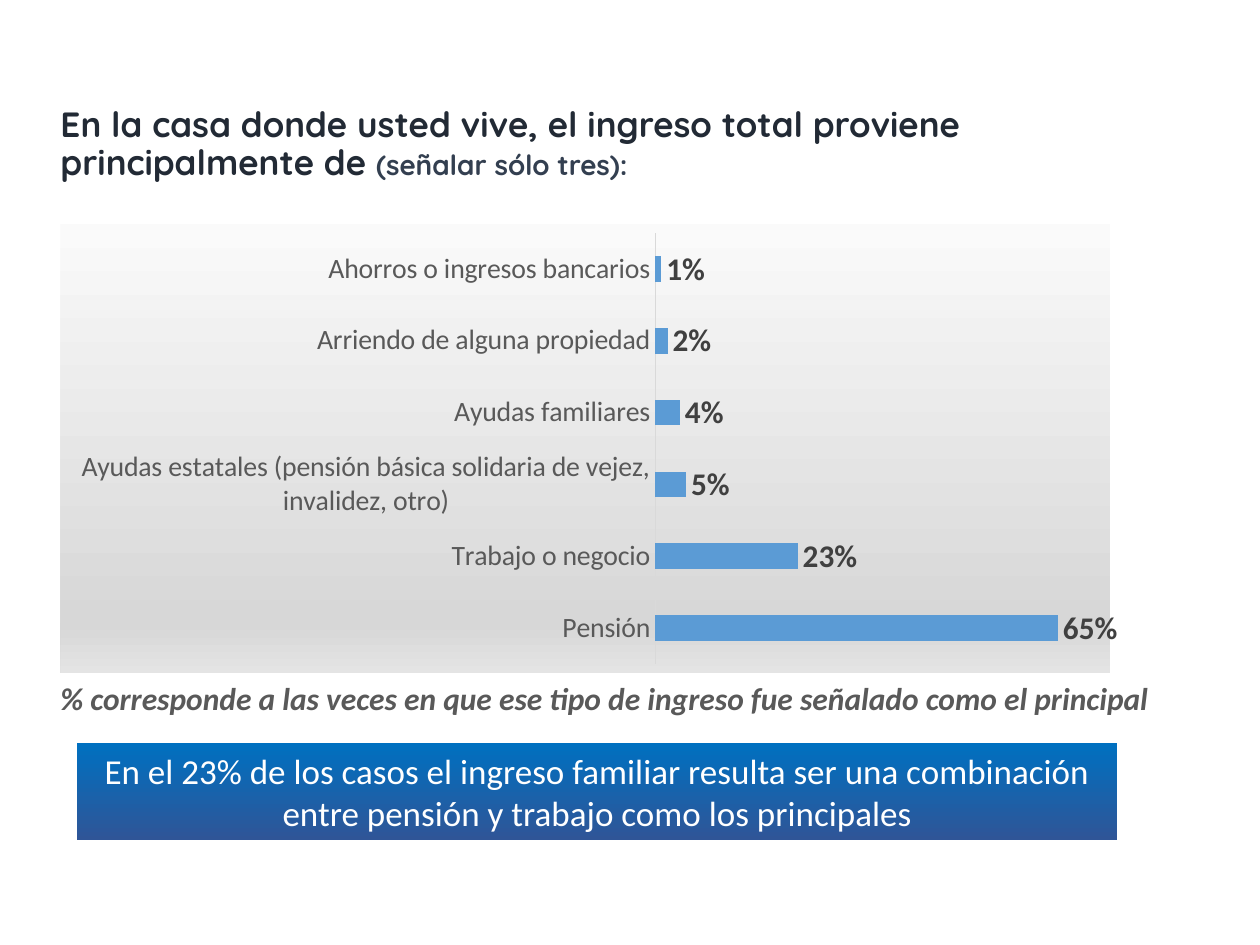
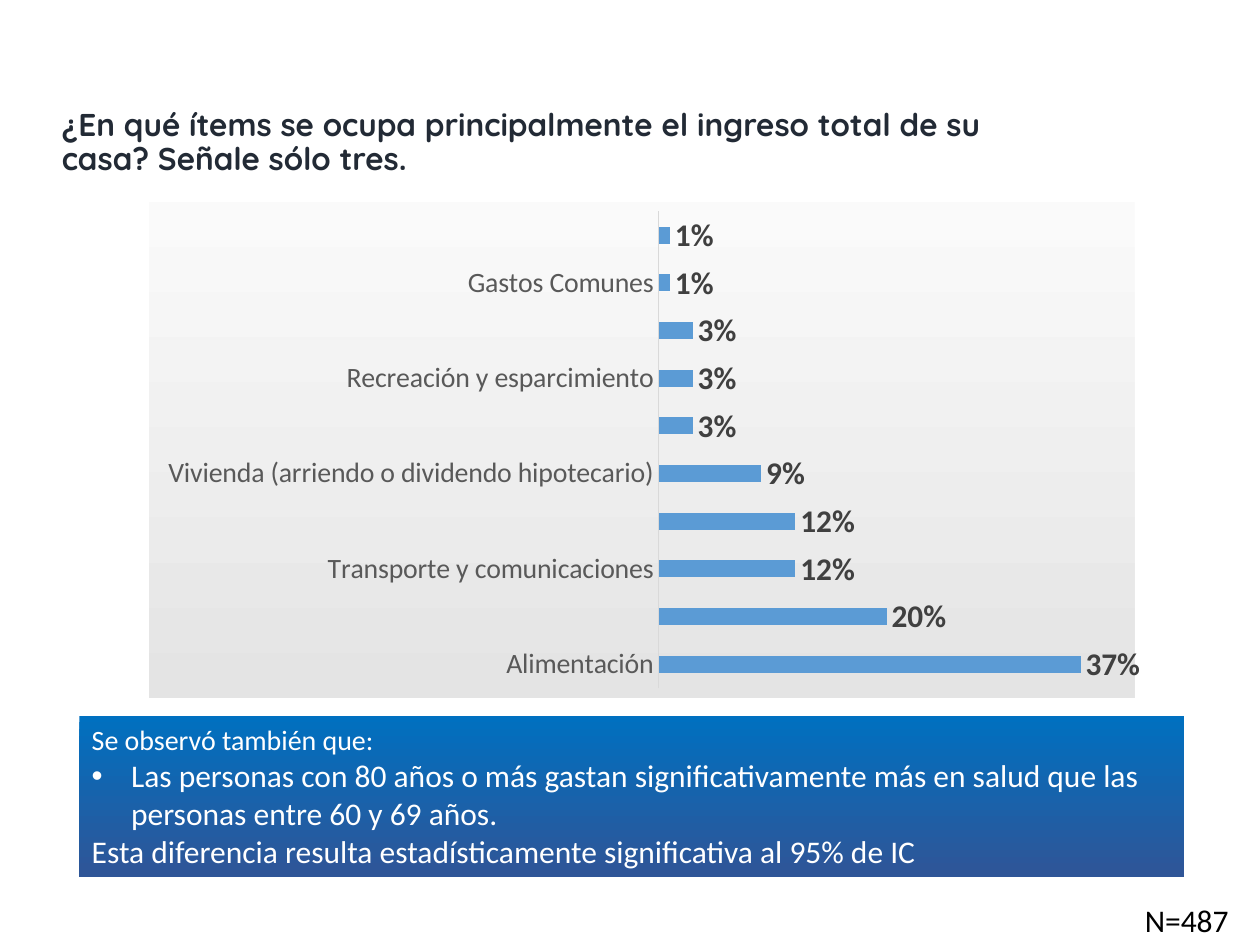
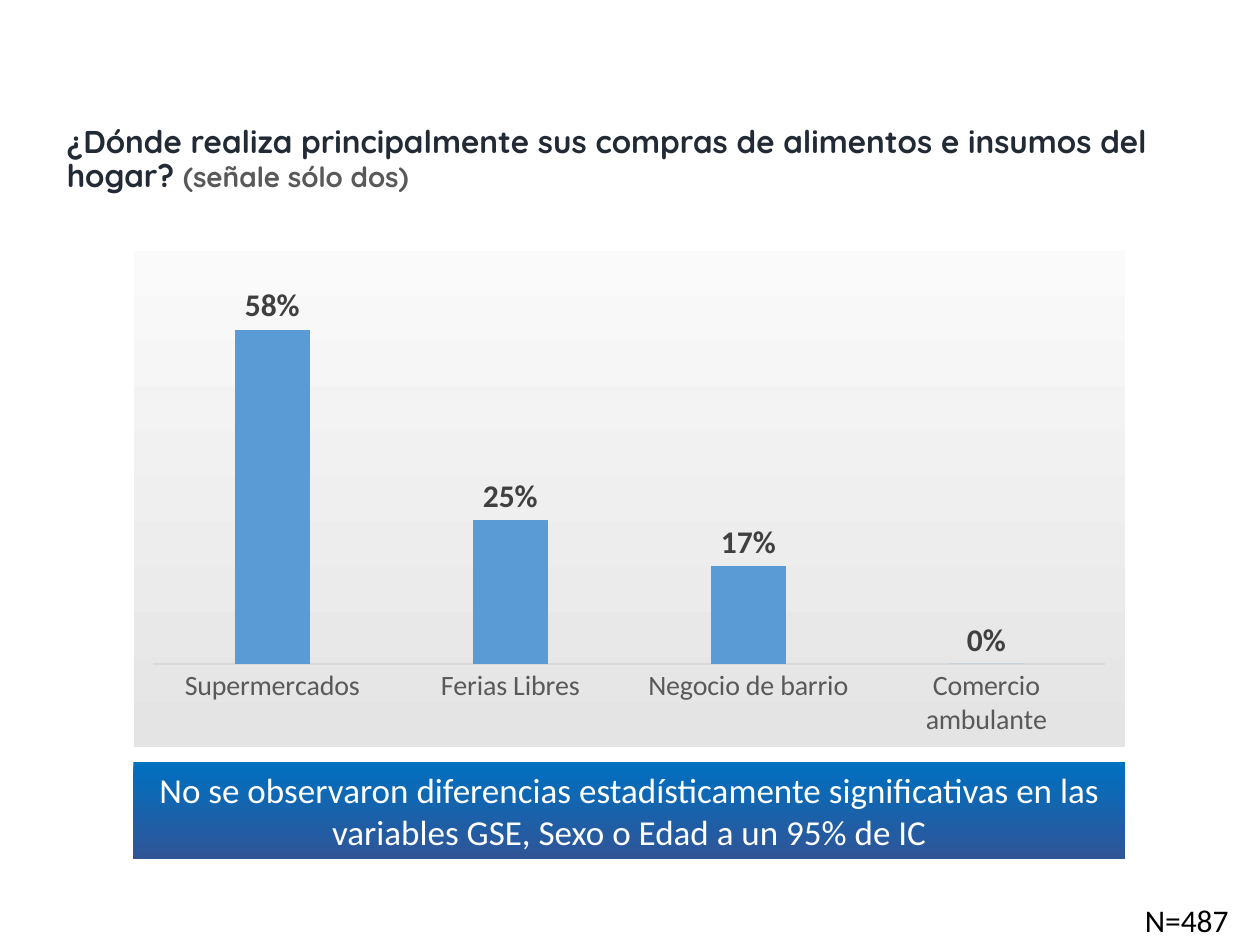
import pptx
import pptx.chart.data
import pptx.dml.color
import pptx.enum.chart
import pptx.enum.shapes
import pptx.enum.text
import pptx.oxml
import pptx.oxml.ns
import pptx.util
import lxml.etree

Pt = pptx.util.Pt
qn = pptx.oxml.ns.qn
Align = pptx.enum.text.PP_ALIGN
ChartType = pptx.enum.chart.XL_CHART_TYPE

COLORS = {
    "title": "222A35", "title_hint": "333F50", "grey": "595959", "label": "404040",
    "black": "000000", "white": "FFFFFF", "bar": "5B9BD5", "axis": "D9D9D9",
}
BAND_STOPS = [(0, "0070C0"), (100, "2F5597")]
PANEL_STOPS = [(0, "FAFAFA"), (100, "E4E4E4")]
DARK_PANEL_STOPS = [(0, "FAFAFA"), (89, "D7D7D7"), (100, "E4E4E4")]

TITLE = {"name": "Quicksand", "size": 18, "bold": True, "color": "title"}
BIG_TITLE = {**TITLE, "size": 20}
HINT = {**TITLE, "size": 16, "color": "grey"}
BAND = {"name": "Calibri", "size": 20, "color": "white"}
FINDING = {**BAND, "size": 18}
NOTE = {"name": "Calibri", "size": 18, "bold": True, "italic": True, "color": "grey"}
SAMPLE = {"name": "Calibri", "size": 18, "color": "black"}
CHART = {"name": "Calibri", "size": 16, "color": "black"}
AXIS = {**CHART, "color": "grey"}
VALUE = {"name": "Calibri", "size": 18, "bold": True, "color": "label"}

SAMPLE_AT = (595.44, 511.2, 113.76, 28.8)
BULLET_INDENT = 22.5

SLIDES = [
    {
        "title_at": (27.36, 38.16, 535.68, 90),
        "title": [
            ("En la casa donde usted vive, el ingreso total proviene principalmente de ", BIG_TITLE),
            ("(señalar sólo tres):", {**HINT, "color": "title_hint"}),
        ],
        "chart_at": (34.56, 128.16, 604.08, 256.32),
        "chart": {
            "type": ChartType.BAR_CLUSTERED, "gap": 182, "overlap": 0, "max": 0.7,
            "panel": DARK_PANEL_STOPS,
            "values": [
                ("Pensión", 0.65),
                ("Trabajo o negocio", 0.23),
                ("Ayudas estatales (pensión básica solidaria de vejez, invalidez, otro)", 0.05),
                ("Ayudas familiares", 0.04),
                ("Arriendo de alguna propiedad", 0.02),
                ("Ahorros o ingresos bancarios", 0.01),
            ],
        },
        "band_at": (43.92, 424.8, 594.72, 55.44),
        "band_align": Align.CENTER,
        "band": [("En el 23% de los casos el ingreso familiar resulta ser una combinación "
                  "entre pensión y trabajo como los principales", BAND, False)],
        "text_at": (27.36, 384.48, 656.64, 28.8),
        "text": ("% corresponde a las veces en que ese tipo de ingreso fue señalado "
                 "como el principal", NOTE, Align.LEFT),
    },
    {
        "title_at": (28.08, 36.72, 576, 90),
        "title": [("¿En qué ítems se ocupa principalmente el ingreso total de su casa? "
                   "Señale sólo tres.", TITLE)],
        "chart_at": (84.96, 115.2, 566.64, 283.68),
        "chart": {
            "type": ChartType.BAR_CLUSTERED, "gap": 182, "overlap": 0, "max": 0.4,
            "panel": PANEL_STOPS,
            "values": [
                ("Alimentación", 0.37),
                ("", 0.2),
                ("Transporte y comunicaciones", 0.12),
                ("", 0.12),
                ("Vivienda (arriendo o dividendo hipotecario)", 0.09),
                ("", 0.03),
                ("Recreación y esparcimiento", 0.03),
                ("", 0.03),
                ("Gastos Comunes", 0.01),
                ("", 0.01),
            ],
        },
        "band_at": (45.36, 408.96, 631.44, 92.16),
        "band_align": Align.LEFT,
        "band": [
            ("Se observó también que:", {**BAND, "size": 16}, False),
            ("Las personas con 80 años o más gastan significativamente más en salud que las "
             "personas entre 60 y 69 años.", FINDING, True),
            ("Esta diferencia resulta estadísticamente significativa al 95% de IC", FINDING, False),
        ],
        "text_at": SAMPLE_AT,
        "text": ("N=487", SAMPLE, Align.RIGHT),
    },
    {
        "title_at": (30.96, 50.4, 657.36, 82.8),
        "title": [
            ("¿Dónde realiza principalmente sus compras de alimentos e insumos del hogar? ", TITLE),
            ("(señale sólo dos)", HINT),
        ],
        "chart_at": (76.32, 143.28, 566.64, 283.68),
        "chart": {
            "type": ChartType.COLUMN_CLUSTERED, "gap": 219, "overlap": -27, "max": 0.7,
            "panel": PANEL_STOPS,
            "values": [
                ("Supermercados", 0.58),
                ("Ferias Libres", 0.25),
                ("Negocio de barrio", 0.17),
                ("Comercio ambulante", 0),
            ],
        },
        "band_at": (76.32, 435.6, 566.64, 55.44),
        "band_align": Align.CENTER,
        "band": [("No se observaron diferencias estadísticamente significativas en las "
                  "variables GSE, Sexo o Edad a un 95% de IC", BAND, False)],
        "text_at": SAMPLE_AT,
        "text": ("N=487", SAMPLE, Align.RIGHT),
    },
]


def rgb(name):
    return pptx.dml.color.RGBColor.from_string(COLORS[name])


def set_values(target, **values):
    for name, value in values.items():
        setattr(target, name, value)


def style_font(font, style):
    for name, value in style.items():
        if name == "color":
            font.color.rgb = rgb(value)
        else:
            setattr(font, name, Pt(value) if name == "size" else value)


def points(place):
    return [Pt(length) for length in place]


def add_span(para, text, style):
    span = para.add_run()
    span.text = text
    style_font(span.font, style)


def gradient(stops):
    fill = lxml.etree.Element(qn("a:gradFill"), rotWithShape="1")
    stop_list = lxml.etree.SubElement(fill, qn("a:gsLst"))
    for position, color in stops:
        stop = lxml.etree.SubElement(stop_list, qn("a:gs"), pos=str(position * 1000))
        lxml.etree.SubElement(stop, qn("a:srgbClr"), val=color)
    lxml.etree.SubElement(fill, qn("a:lin"), ang="5400000", scaled="0")
    return fill


def add_bullet(para):
    properties = para._p.get_or_add_pPr()
    indent = Pt(BULLET_INDENT)
    properties.set("marL", str(indent))
    properties.set("indent", str(-indent))
    lxml.etree.SubElement(properties, qn("a:buFont"), typeface="Arial")
    lxml.etree.SubElement(properties, qn("a:buChar"), char="•")


def fill_title(page, place, spans):
    title = page.shapes.title
    title.left, title.top, title.width, title.height = points(place)
    set_values(title.text_frame, word_wrap=True,
               auto_size=pptx.enum.text.MSO_AUTO_SIZE.NONE,
               vertical_anchor=pptx.enum.text.MSO_ANCHOR.MIDDLE)
    para = title.text_frame.paragraphs[0]
    set_values(para, alignment=Align.LEFT, line_spacing=0.9, space_before=Pt(0))
    for text, style in spans:
        add_span(para, text, style)


def add_chart(page, place, content):
    data = pptx.chart.data.CategoryChartData(number_format="0%")
    data.categories = [category for category, _ in content["values"]]
    data.add_series("Series 1", [value for _, value in content["values"]])
    chart = page.shapes.add_chart(content["type"], *points(place), data).chart
    set_values(chart, has_title=False, has_legend=False)
    style_font(chart.font, CHART)

    panel = lxml.etree.Element(qn("c:spPr"))
    panel.append(gradient(content["panel"]))
    outline = lxml.etree.SubElement(panel, qn("a:ln"))
    lxml.etree.SubElement(outline, qn("a:noFill"))
    chart._chartSpace.find(qn("c:chart")).addnext(panel)

    no_ticks = pptx.enum.chart.XL_TICK_MARK.NONE
    set_values(chart.category_axis, major_tick_mark=no_ticks, minor_tick_mark=no_ticks,
               has_major_gridlines=False)
    style_font(chart.category_axis.tick_labels.font, AXIS)
    axis_line = chart.category_axis.format.line
    axis_line.width = Pt(0.75)
    axis_line.color.rgb = rgb("axis")
    set_values(chart.value_axis, visible=False, has_major_gridlines=False,
               minimum_scale=0, maximum_scale=content["max"])

    plot = chart.plots[0]
    set_values(plot, gap_width=content["gap"], overlap=content["overlap"],
               vary_by_categories=False, has_data_labels=True)
    set_values(plot.data_labels, show_value=True, number_format="0%",
               number_format_is_linked=False,
               position=pptx.enum.chart.XL_LABEL_POSITION.OUTSIDE_END)
    style_font(plot.data_labels.font, VALUE)
    bars = plot.series[0].format.fill
    bars.solid()
    bars.fore_color.rgb = rgb("bar")


def add_band(page, place, lines, alignment):
    band = page.shapes.add_shape(pptx.enum.shapes.MSO_SHAPE.RECTANGLE, *points(place))
    band.shadow.inherit = False
    band.line.fill.background()
    band._element.spPr.find(qn("a:prstGeom")).addnext(gradient(BAND_STOPS))
    frame = band.text_frame
    frame.word_wrap = True
    for number, (text, style, bulleted) in enumerate(lines):
        para = frame.add_paragraph() if number else frame.paragraphs[0]
        para.alignment = alignment
        if bulleted:
            add_bullet(para)
        add_span(para, text, style)


def add_text(page, place, text, style, alignment):
    box = page.shapes.add_textbox(*points(place))
    box.text_frame.word_wrap = True
    para = box.text_frame.paragraphs[0]
    para.alignment = alignment
    add_span(para, text, style)


def main():
    deck = pptx.Presentation()
    deck.slide_width, deck.slide_height = Pt(720), Pt(540)
    for content in SLIDES:
        page = deck.slides.add_slide(deck.slide_layouts[5])
        fill_title(page, content["title_at"], content["title"])
        add_chart(page, content["chart_at"], content["chart"])
        add_band(page, content["band_at"], content["band"], content["band_align"])
        add_text(page, content["text_at"], *content["text"])
    deck.save("out.pptx")


if __name__ == "__main__":
    main()
